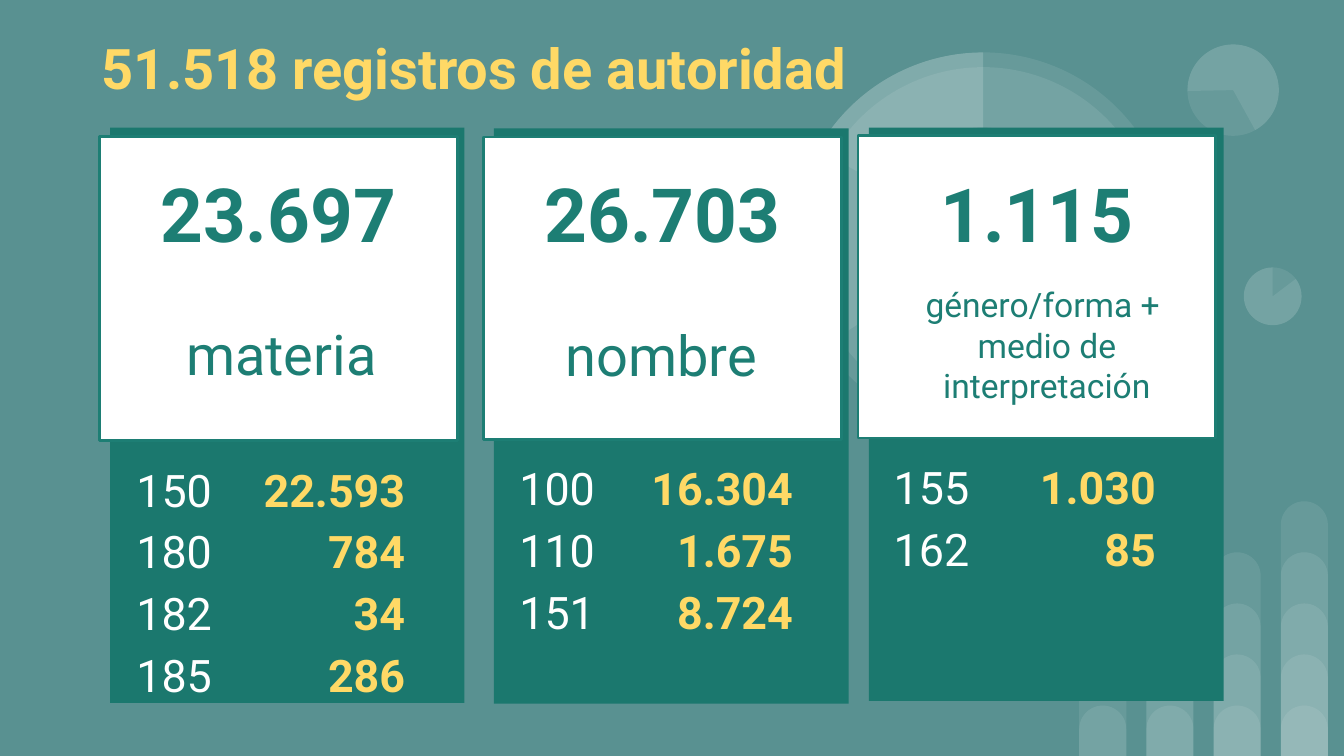
"""Build the authority-records slide: three totals with their field breakdowns."""
from dataclasses import dataclass

from lxml import etree
from pptx import Presentation
from pptx.dml.color import RGBColor
from pptx.enum.shapes import MSO_SHAPE
from pptx.enum.text import MSO_ANCHOR, MSO_AUTO_SIZE, PP_ALIGN
from pptx.oxml.ns import qn
from pptx.util import Emu, Pt

PX = 4572
WIDTH, HEIGHT = 2000, 1125
INSET = 20
RECT = MSO_SHAPE.RECTANGLE
ELLIPSE = MSO_SHAPE.OVAL
PIE = MSO_SHAPE.PIE
BAR = MSO_SHAPE.ROUND_2_SAME_RECTANGLE
CENTER, LEFT = PP_ALIGN.CENTER, PP_ALIGN.LEFT
TOP = MSO_ANCHOR.TOP
NO_AUTOFIT = MSO_AUTO_SIZE.NONE


@dataclass(frozen=True)
class Theme:
    font: str = "Roboto"
    background: str = "599191"
    panel: str = "1B786E"
    accent: str = "1D7E74"
    white: str = "FFFFFF"
    yellow: str = "FFD966"
    veil_alpha: int = 9
    title_size: int = 30
    total_size: int = 40
    label_size: int = 30
    small_label_size: int = 18
    record_size: int = 24


@dataclass(frozen=True)
class Box:
    left: int
    top: int
    width: int
    height: int

    def emu(self) -> tuple:
        return tuple(Emu(v * PX) for v in (self.left, self.top, self.width, self.height))


@dataclass(frozen=True)
class Disc:
    left: int
    top: int
    size: int
    start: float | None = None
    rotation: float = 0
    end: float = 270
    solid: bool = False


@dataclass(frozen=True)
class Card:
    total: str
    label: tuple[str, ...]
    records: tuple[tuple[str, str], ...]
    panel: Box
    face: Box
    total_box: Box
    label_box: Box
    records_box: Box
    label_size: int
    value_tab: int


THEME = Theme()

DISCS = (
    Disc(1851, 398, 86),
    Disc(1851, 398, 86, start=322.95),
    Disc(1767, 66, 136, rotation=215.9),
    Disc(1767, 66, 136, start=322.95, end=205.23, rotation=215.9),
    Disc(1181, 78, 564),
    Disc(1204, 100, 518, rotation=34.1),
    Disc(1181, 78, 564, start=146.69),
    Disc(1292, 190, 340, rotation=34.1, solid=True),
    Disc(1181, 78, 564, start=209.24),
)

CARDS = (
    Card("23.697", ("materia",),
         (("150", "22.593"), ("180", "784"), ("182", "34"), ("185", "286")),
         Box(164, 190, 527, 856), Box(148, 203, 533, 453), Box(178, 230, 472, 142),
         Box(162, 456, 514, 128), Box(150, 656, 528, 378), THEME.label_size, 400),
    Card("26.703", ("nombre",),
         (("100", "16.304"), ("110", "1.675"), ("151", "8.724")),
         Box(735, 191, 528, 856), Box(720, 204, 532, 450), Box(750, 230, 472, 142),
         Box(720, 457, 528, 128), Box(720, 654, 528, 252), THEME.label_size, 407),
    Card("1.115", ("género/forma + ", "medio de", "interpretación"),
         (("155", "1.030"), ("162", "85")),
         Box(1293, 190, 528, 853), Box(1277, 202, 532, 450), Box(1307, 230, 472, 142),
         Box(1292, 403, 532, 160), Box(1277, 652, 528, 370), THEME.small_label_size, 390),
)


def add_block(slide, kind, box: Box, color: str, alpha: int = 100, line: str | None = None):
    """Add a shadowless filled shape, optionally translucent or outlined."""
    block = slide.shapes.add_shape(kind, *box.emu())
    block.shadow.inherit = False
    block.fill.solid()
    block.fill.fore_color.rgb = RGBColor.from_string(color)
    if alpha < 100:
        color_node = block.element.spPr.find(qn("a:solidFill"))[0]
        etree.SubElement(color_node, qn("a:alpha"), val=str(alpha * 1000))
    if line:
        block.line.color.rgb = RGBColor.from_string(line)
        block.line.width = Pt(1.5)
    else:
        block.line.fill.background()
    return block


def prepare_frame(frame, left_inset: int = INSET) -> None:
    """Give a text frame wrapped, top-anchored text and even insets."""
    frame.word_wrap = True
    frame.auto_size = NO_AUTOFIT
    frame.vertical_anchor = TOP
    frame.margin_left = Emu(left_inset * PX)
    frame.margin_right = frame.margin_top = frame.margin_bottom = Emu(INSET * PX)


def style_font(font, size: int, color: str | None = None, bold: bool = False) -> None:
    """Apply the theme typeface with a size, colour and weight."""
    font.name = THEME.font
    font.size = Pt(size)
    font.bold = bold
    if color:
        font.color.rgb = RGBColor.from_string(color)


def write_lines(frame, lines: tuple[str, ...], size: int, color: str, bold: bool = False) -> None:
    """Write centred paragraphs in one style."""
    prepare_frame(frame)
    for index, line in enumerate(lines):
        paragraph = frame.add_paragraph() if index else frame.paragraphs[0]
        paragraph.text = line
        paragraph.alignment = CENTER
        style_font(paragraph.font, size, color, bold)


def add_records(slide, card: Card) -> None:
    """Write field codes with their counts aligned at a right tab."""
    frame = slide.shapes.add_textbox(*card.records_box.emu()).text_frame
    prepare_frame(frame, left_inset=53)
    for index, (code, count) in enumerate(card.records):
        paragraph = frame.add_paragraph() if index else frame.paragraphs[0]
        paragraph.alignment = LEFT
        paragraph.line_spacing = 1.15
        tabs = etree.SubElement(paragraph._p.get_or_add_pPr(), qn("a:tabLst"))
        etree.SubElement(tabs, qn("a:tab"), pos=str(card.value_tab * PX), algn="r")
        style_font(paragraph.font, THEME.record_size)
        for text, color, bold in ((f"{code}\t", THEME.white, False),
                                  (count, THEME.yellow, True)):
            run = paragraph.add_run()
            run.text = text
            run.font.color.rgb = RGBColor.from_string(color)
            run.font.bold = bold


def add_card(slide, card: Card) -> None:
    """Draw one card with its total, label and records."""
    add_block(slide, RECT, card.panel, THEME.panel)
    add_block(slide, RECT, card.face, THEME.white, line=THEME.accent)
    label = slide.shapes.add_textbox(*card.label_box.emu())
    write_lines(label.text_frame, card.label, card.label_size, THEME.accent)
    total = slide.shapes.add_textbox(*card.total_box.emu())
    write_lines(total.text_frame, (card.total,), THEME.total_size, THEME.accent, bold=True)
    add_records(slide, card)


def add_bars(slide) -> None:
    """Draw columns of overlapping translucent bars, each one step taller."""
    for column in range(4):
        for level in range(column + 2):
            top = 1050 - 76 * level
            bar = add_block(slide, BAR, Box(1606 + 100 * column, top, 70, HEIGHT - top),
                            THEME.white, THEME.veil_alpha)
            bar.adjustments[0] = 0.5


def add_disc(slide, disc: Disc) -> None:
    """Draw a full disc, or a pie when it has a start angle in degrees."""
    box = Box(disc.left, disc.top, disc.size, disc.size)
    kind = ELLIPSE if disc.start is None else PIE
    color, alpha = (THEME.background, 100) if disc.solid else (THEME.white, THEME.veil_alpha)
    shape = add_block(slide, kind, box, color, alpha)
    shape.rotation = disc.rotation
    if disc.start is not None:
        for index, degrees in enumerate((disc.start, disc.end)):
            shape.adjustments[index] = degrees * 0.6


def main() -> None:
    """Assemble and save the slide."""
    deck = Presentation()
    deck.slide_width, deck.slide_height = Emu(WIDTH * PX), Emu(HEIGHT * PX)
    slide = deck.slides.add_slide(deck.slide_layouts[5])
    slide.background.fill.solid()
    slide.background.fill.fore_color.rgb = RGBColor.from_string(THEME.background)
    add_bars(slide)
    for disc in DISCS:
        add_disc(slide, disc)
    for card in CARDS:
        add_card(slide, card)
    title = slide.shapes.title
    title.left, title.top, title.width, title.height = Box(114, 30, 1184, 128).emu()
    write_lines(title.text_frame, ("51.518 registros de autoridad",),
                THEME.title_size, THEME.yellow, bold=True)
    title.element.getparent().append(title.element)
    deck.save("out.pptx")


if __name__ == "__main__":
    main()
